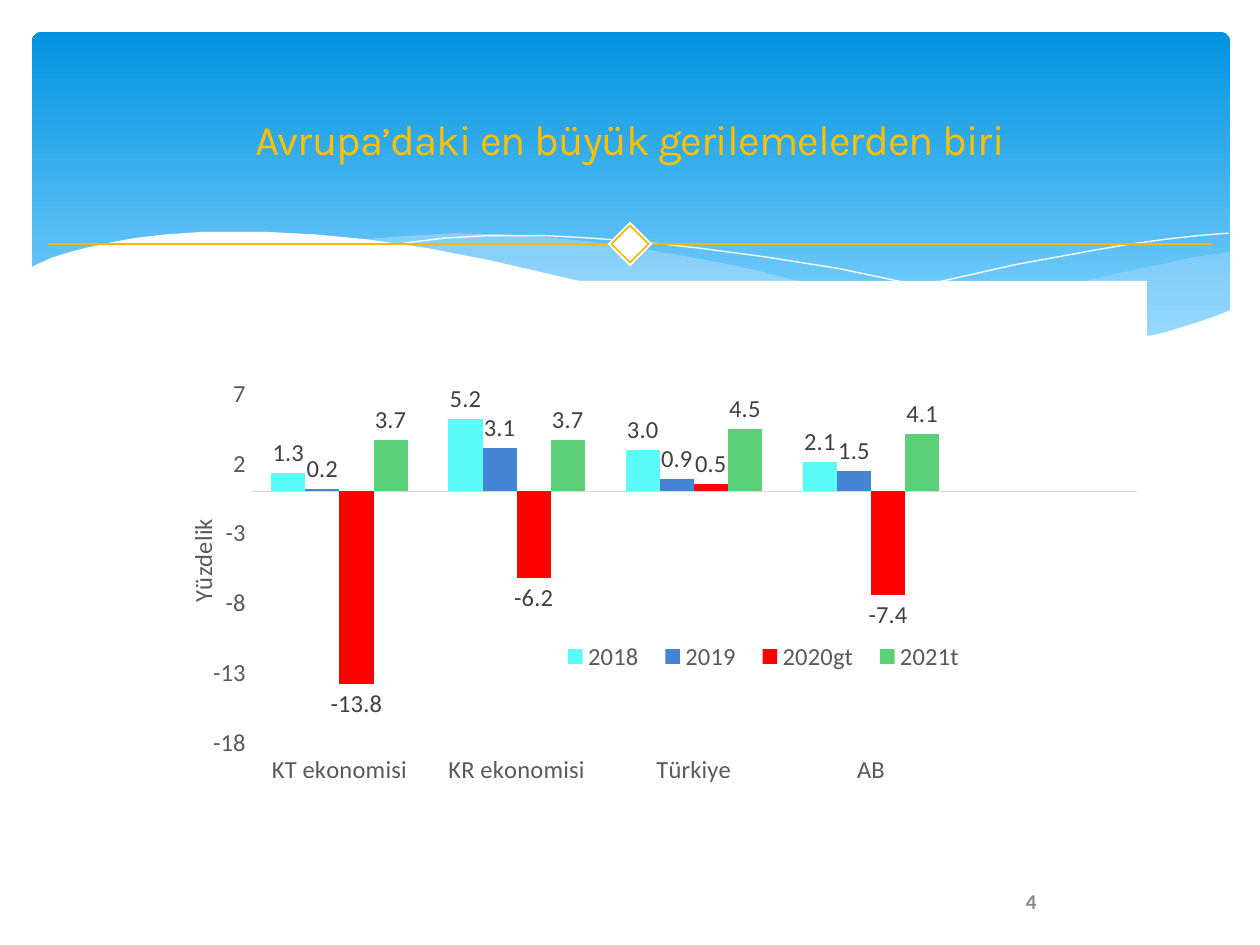
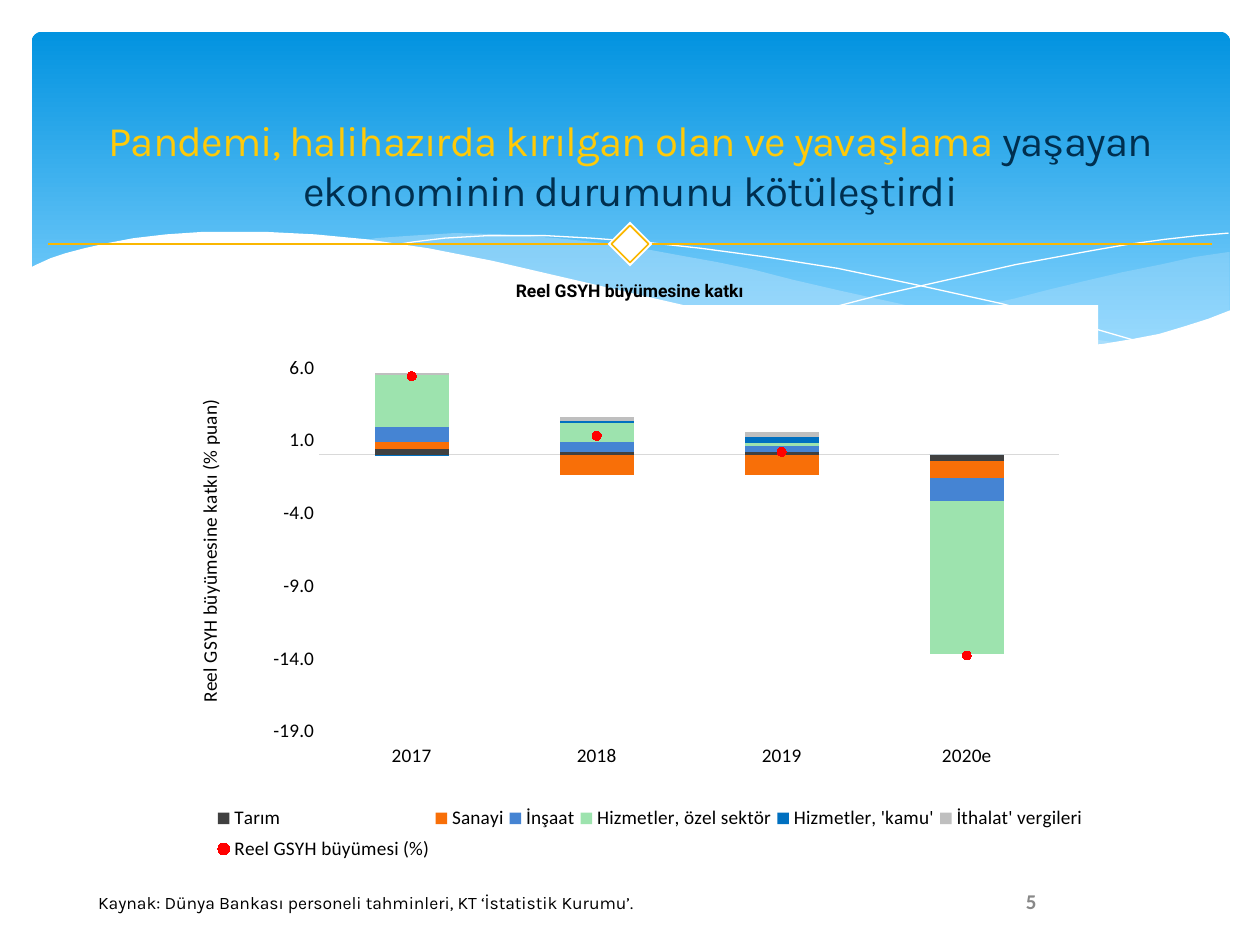
"""Build two slides on economic contraction, each with a wave banner and a column chart."""
from lxml.etree import SubElement
from pptx import Presentation
from pptx.chart.data import CategoryChartData
from pptx.dml.color import RGBColor
from pptx.enum.chart import (XL_CHART_TYPE, XL_LABEL_POSITION, XL_LEGEND_POSITION,
                             XL_MARKER_STYLE, XL_TICK_LABEL_POSITION, XL_TICK_MARK)
from pptx.enum.shapes import MSO_CONNECTOR, MSO_SHAPE
from pptx.enum.text import MSO_ANCHOR, PP_ALIGN
from pptx.oxml import parse_xml
from pptx.oxml.ns import nsdecls, qn
from pptx.util import Cm, Pt

WHITE, GOLD, BLACK, GREY = "FFFFFF", "FAB701", "000000", "595959"
PALE_BLUE, BLUE, RED = "C6E7FC", "4584D3", "FF0000"
HUNDREDTH_INCH = Cm(2.54) / 100

WAVES = [
    {"fill": PALE_BLUE, "alpha": 29, "points": [
        (975, 200), (948, 204), (921, 210), (891, 216), (861, 223), (832, 230), (805, 237),
        (753, 248), (706, 257), (661, 265), (691, 269), (719, 272), (745, 275), (769, 277),
        (803, 278), (835, 277), (863, 275), (889, 272), (913, 267), (935, 262), (949, 257),
        (963, 252), (976, 247), (976, 200)]},
    {"fill": PALE_BLUE, "alpha": 40, "points": [
        (893, 273), (866, 269), (807, 260), (741, 247), (668, 231), (629, 222), (598, 214),
        (569, 208), (541, 203), (514, 198), (489, 194), (442, 189), (399, 186), (361, 185),
        (328, 187), (299, 189), (286, 191), (323, 196), (362, 203), (404, 211), (449, 222),
        (491, 232), (530, 240), (584, 252), (634, 261), (680, 268), (722, 274), (761, 277),
        (796, 278), (838, 278), (867, 276)]},
    {"line": WHITE, "points": [
        (309, 195), (328, 192), (353, 189), (387, 187), (433, 187), (469, 189), (510, 192),
        (556, 197), (608, 204), (665, 213), (727, 226), (795, 241), (869, 261), (907, 272)]},
    {"line": WHITE, "points": [
        (613, 257), (653, 246), (695, 235), (748, 223), (806, 210), (866, 199), (895, 194),
        (924, 190), (951, 187), (975, 185)]},
    {"fill": WHITE, "points": [
        (977, 246), (959, 253), (940, 259), (920, 265), (899, 269), (875, 273), (850, 275),
        (823, 277), (793, 276), (761, 275), (726, 272), (688, 268), (648, 262), (603, 254),
        (555, 245), (503, 233), (447, 220), (391, 207), (340, 197), (292, 190), (250, 186),
        (211, 184), (161, 184), (132, 186), (106, 189), (85, 193), (67, 197), (52, 201),
        (40, 205), (29, 210), (23, 213), (23, 329), (977, 329)]},
]

CONTENT = [
    {"texts": [
        {"box": (0, 2.01, 25.4, 2.16), "inset": 0.61, "size": 24, "font": "Karla",
         "line_spacing": 0.85, "tracking": -50,
         "runs": [("Avrupa’daki en büyük gerilemelerden biri", "FFC000")]}],
     "kind": XL_CHART_TYPE.COLUMN_CLUSTERED,
     "box": (3.05, 5.66, 20.07, 10.24),
     "categories": ["KT ekonomisi", "KR ekonomisi", "Türkiye", "AB", ""],
     "series": [("2018", [1.3, 5.2, 3, 2.1, None], "5AFBF8"),
                ("2019", [0.2, 3.1, 0.9, 1.5, None], BLUE),
                ("2020gt", [-13.8, -6.2, 0.5, -7.4, None], RED),
                ("2021t", [3.7, 3.7, 4.5, 4.1, None], "5BD078")],
     "axis_title": "Yüzdelik", "size": 14, "colour": GREY, "format": "0",
     "range": (-18, 10), "gap": 120, "overlap": 0, "labels": True,
     "plot_area": (0.1, 0.14, 0.89, 0.77), "legend_area": (0.4, 0.71, 0.43, 0.06),
     "title_place": (0.03, 0.46)},
    {"texts": [
        {"box": (1.85, 17.83, 15.24, 0.71), "inset": 0.13, "size": 10, "font": "Karla",
         "line_spacing": 1.07, "before": 8, "align": PP_ALIGN.JUSTIFY,
         "runs": [("Kaynak: Dünya Bankası personeli tahminleri, KT ‘İstatistik Kurumu’.", BLACK)]},
        {"box": (0.97, 2.18, 23.47, 2.31), "inset": 0.13, "size": 24, "font": "Karla",
         "tracking": -50,
         "runs": [("Pandemi, halihazırda kırılgan olan ve yavaşlama ", "FFCA08"),
                  ("yaşayan ekonominin durumunu kötüleştirdi", "002F4F")]},
        {"box": (9.45, 5.51, 6.48, 0.69), "inset": 0.13, "size": 10, "font": "Roboto",
         "bold": True, "runs": [("Reel GSYH büyümesine katkı", BLACK)]}],
     "kind": XL_CHART_TYPE.COLUMN_STACKED,
     "box": (2.51, 6.15, 19.63, 11.46),
     "categories": ["2017", "2018", "2019", "2020e"],
     "series": [("Tarım", [0.4, 0.2, 0.2, -0.4], "404040"),
                ("Sanayi", [0.5, -1.4, -1.4, -1.2], "F86F08"),
                ("İnşaat", [1, 0.7, 0.4, -1.6], BLUE),
                ("Hizmetler, özel sektör", [3.6, 1.3, 0.2, -10.5], "9DE3AE"),
                ("Hizmetler, 'kamu'", [-0.1, 0.1, 0.4, 0], "0070C0"),
                ("İthalat' vergileri", [0.1, 0.3, 0.4, 0], "BFBFBF"),
                ("Reel GSYH büyümesi (%)", [5.4, 1.3, 0.2, -13.8], RED)],
     "axis_title": "Reel GSYH büyümesine katkı (% puan)", "size": 11, "colour": BLACK,
     "format": "0.0", "range": (-19, 6), "gap": 150, "overlap": 100, "labels": False,
     "plot_area": (0.2, 0.11, 0.76, 0.64), "legend_area": (0.09, 0.87, 0.9, 0.12),
     "title_place": (0.07, 0.16)},
]


def colour(hex_string):
    return RGBColor.from_string(hex_string)


def add_text(slide, box, runs, size, font, inset=0, bold=False, align=PP_ALIGN.CENTER,
             anchor=MSO_ANCHOR.TOP, line_spacing=1.0, before=0, tracking=0):
    frame = slide.shapes.add_textbox(*map(Cm, box)).text_frame
    frame.word_wrap = True
    frame.vertical_anchor = anchor
    frame.margin_left = frame.margin_right = frame.margin_top = frame.margin_bottom = Cm(inset)
    paragraph = frame.paragraphs[0]
    paragraph.alignment = align
    paragraph.line_spacing = line_spacing
    paragraph.space_before = Pt(before)
    for text, text_colour in runs:
        run = paragraph.add_run()
        run.text = text
        run.font.size, run.font.name, run.font.bold = Pt(size), font, bold
        run.font.color.rgb = colour(text_colour)
        run.font._element.set("spc", str(tracking))


presentation = Presentation()
presentation.slide_width, presentation.slide_height = Cm(25.4), Cm(19.05)

for number, content in enumerate(CONTENT, start=4):
    slide = presentation.slides.add_slide(presentation.slide_layouts[6])

    banner = slide.shapes.add_shape(MSO_SHAPE.ROUNDED_RECTANGLE,
                                    Cm(0.64), Cm(0.64), Cm(24.16), Cm(6.86))
    banner.adjustments[0] = 0.03
    banner.shadow.inherit = False
    banner.line.fill.background()
    banner.fill.gradient()
    banner.fill.gradient_angle = 270
    for stop, position, stop_colour in zip(banner.fill.gradient_stops, (0, 0.9),
                                           ("0293E0", "83D3FE")):
        stop.position = position
        stop.color.rgb = colour(stop_colour)

    for wave in WAVES:
        builder = slide.shapes.build_freeform(*wave["points"][0], scale=HUNDREDTH_INCH)
        builder.add_line_segments(wave["points"][1:], close="fill" in wave)
        shape = builder.convert_to_shape()
        shape.shadow.inherit = False
        if "fill" in wave:
            shape.line.fill.background()
            shape.fill.solid()
            shape.fill.fore_color.rgb = colour(wave["fill"])
            fill_colour = shape._element.spPr.find(qn("a:solidFill"))[0]
            SubElement(fill_colour, qn("a:alpha"), val=str(wave.get("alpha", 100) * 1000))
        else:
            shape.fill.background()
            shape.line.color.rgb = colour(wave["line"])
            shape.line.width = Pt(0)

    rule = slide.shapes.add_connector(MSO_CONNECTOR.STRAIGHT,
                                      Cm(0.97), Cm(4.92), Cm(24.43), Cm(4.92))
    rule.line.color.rgb = colour(GOLD)
    rule.line.width = Pt(1)
    SubElement(rule._element.spPr, qn("a:effectLst"))
    for side, outline in ((0.64, WHITE), (0.53, GOLD)):
        diamond = slide.shapes.add_shape(MSO_SHAPE.RECTANGLE, Cm(12.7 - side / 2),
                                         Cm(4.92 - side / 2), Cm(side), Cm(side))
        diamond.rotation = 45
        diamond.shadow.inherit = False
        diamond.fill.solid()
        diamond.fill.fore_color.rgb = colour(WHITE)
        diamond.line.width = Pt(1)
        diamond.line.color.rgb = colour(outline)
        if outline == WHITE:
            diamond.line.fill.background()

    for text in content["texts"]:
        add_text(slide, **text)
    add_text(slide, (17.93, 17.65, 5.72, 1.02), [(str(number), "888888")], 12, "Calibri",
             bold=True, anchor=MSO_ANCHOR.MIDDLE)

    chart_data = CategoryChartData()
    chart_data.categories = content["categories"]
    for name, values, _ in content["series"]:
        chart_data.add_series(name, values)
    chart = slide.shapes.add_chart(content["kind"], *map(Cm, content["box"]), chart_data).chart
    chart.has_title = False
    chart.font.name, chart.font.size = "Calibri", Pt(content["size"])
    chart.font.color.rgb = colour(content["colour"])
    chart._chartSpace.find(qn("c:chart")).addnext(parse_xml(
        f'<c:spPr {nsdecls("c", "a")}><a:solidFill><a:srgbClr val="{WHITE}"/></a:solidFill>'
        '<a:ln><a:noFill/></a:ln></c:spPr>'))

    plot = chart.plots[0]
    plot.gap_width, plot.overlap = content["gap"], content["overlap"]
    plot.vary_by_categories = False
    for series, (_, _, series_colour) in zip(plot.series, content["series"]):
        series.invert_if_negative = False
        series.format.fill.solid()
        series.format.fill.fore_color.rgb = colour(series_colour)
    if content["labels"]:
        plot.has_data_labels = True
        labels = plot.data_labels
        labels.show_value = True
        labels.position = XL_LABEL_POSITION.OUTSIDE_END
        labels.number_format, labels.number_format_is_linked = "0.0", False
        labels.font.name, labels.font.size = "Calibri", Pt(content["size"])
        labels.font.color.rgb = colour("404040")

    category_axis, value_axis = chart.category_axis, chart.value_axis
    category_axis.tick_label_position = XL_TICK_LABEL_POSITION.LOW
    category_axis.format.line.color.rgb = colour("D9D9D9")
    category_axis.format.line.width = Pt(0.75)
    value_axis.format.line.fill.background()
    value_axis.minimum_scale, value_axis.maximum_scale = content["range"]
    value_axis.major_unit = 5
    value_axis.tick_labels.number_format = content["format"]
    value_axis.tick_labels.number_format_is_linked = False
    for axis in (category_axis, value_axis):
        axis.has_major_gridlines = False
        axis.major_tick_mark = axis.minor_tick_mark = XL_TICK_MARK.NONE
    title_frame = value_axis.axis_title.text_frame
    title_frame.text = content["axis_title"]
    title_frame._txBody.bodyPr.set("rot", "-5400000")
    title_font = title_frame.paragraphs[0].runs[0].font
    title_font.name, title_font.size, title_font.bold = "Calibri", Pt(content["size"]), False
    title_font.color.rgb = colour(content["colour"])

    chart.has_legend = True
    chart.legend.position = XL_LEGEND_POSITION.BOTTOM
    chart.legend.include_in_layout = False
    chart.legend.font.name, chart.legend.font.size = "Calibri", Pt(content["size"])
    chart.legend.font.color.rgb = colour(content["colour"])

    plot_area = chart._chartSpace.chart.plotArea
    for parent, index, area in ((plot_area, 0, content["plot_area"]),
                                (chart.legend._element, 1, content["legend_area"]),
                                (value_axis.axis_title._element, 1, content["title_place"])):
        for previous in parent.findall(qn("c:layout")):
            parent.remove(previous)
        layout = parse_xml(f'<c:layout {nsdecls("c")}><c:manualLayout/></c:layout>')
        if parent is plot_area:
            SubElement(layout[0], qn("c:layoutTarget"), val="inner")
        for key in ("xMode", "yMode"):
            SubElement(layout[0], qn(f"c:{key}"), val="edge")
        for key, value in zip("xywh", area):
            SubElement(layout[0], qn(f"c:{key}"), val=str(value))
        parent.insert(index, layout)

    if content["kind"] == XL_CHART_TYPE.COLUMN_STACKED:
        bars = plot._element
        growth = bars.findall(qn("c:ser"))[-1]
        growth.remove(growth.find(qn("c:invertIfNegative")))
        growth.remove(growth.find(qn("c:spPr")))
        line_chart = parse_xml(f'<c:lineChart {nsdecls("c")}><c:grouping val="standard"/>'
                               '<c:varyColors val="0"/></c:lineChart>')
        line_chart.append(growth)
        SubElement(line_chart, qn("c:marker"), val="1")
        for axis_id in bars.findall(qn("c:axId")):
            SubElement(line_chart, qn("c:axId"), val=axis_id.get("val"))
        bars.addnext(line_chart)
        growth_series = chart.plots[1].series[0]
        growth_series.smooth = False
        growth_series.format.line.fill.background()
        marker = growth_series.marker
        marker.style, marker.size = XL_MARKER_STYLE.CIRCLE, 5
        marker.format.fill.solid()
        marker.format.fill.fore_color.rgb = colour(RED)
        marker.format.line.color.rgb = colour(RED)

presentation.save("out.pptx")
